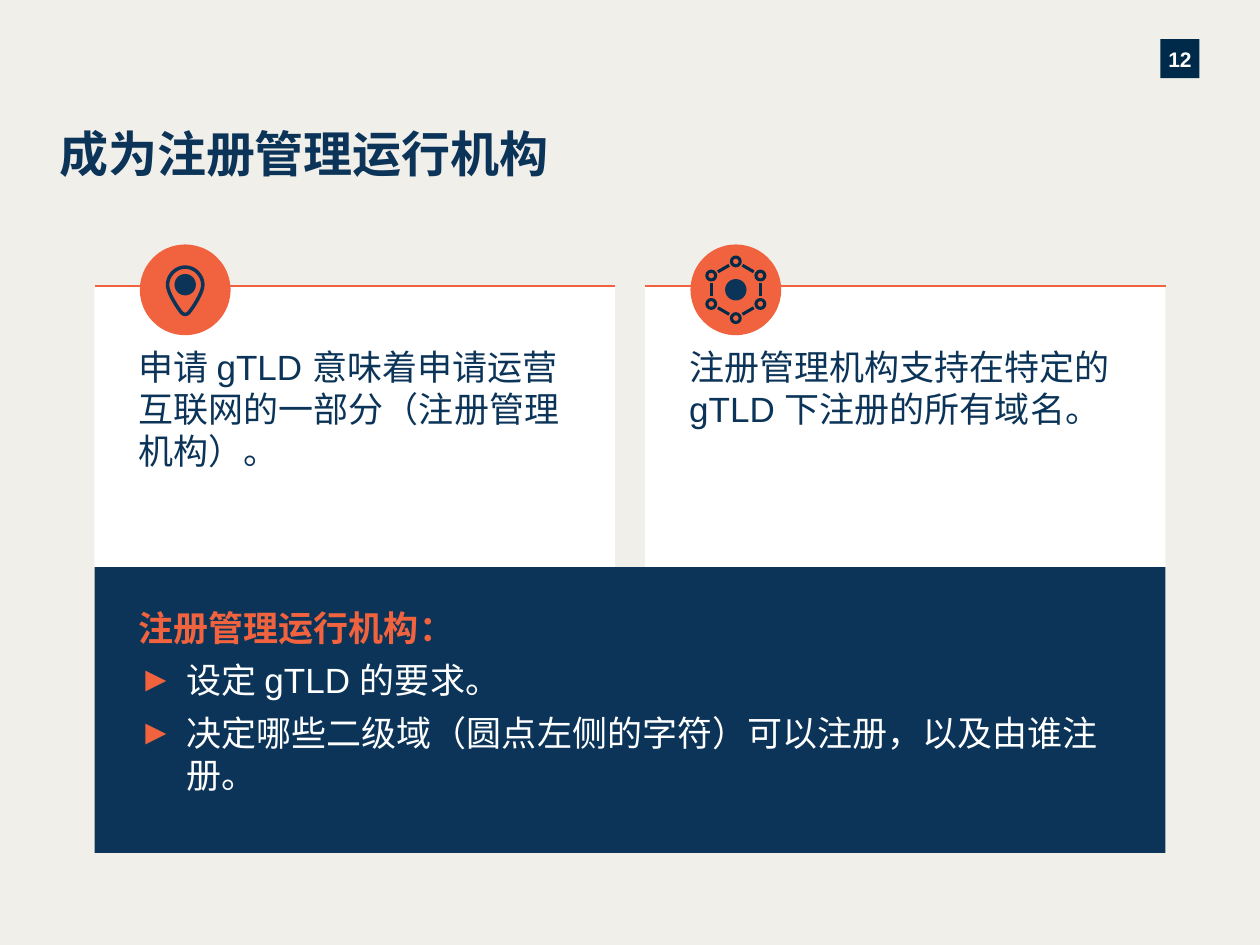
import math

from lxml import etree
from pptx import Presentation, util as u
from pptx.dml.color import RGBColor
from pptx.enum import lang, shapes, text
from pptx.oxml import ns

COLORS = {
    "paper": "F1EFEA", "white": "FFFFFF", "navy": "0B3458",
    "ink": "002B49", "badge": "002A49", "orange": "F1633E",
}
WIDTH, HEIGHT = 10, 7.5
MARGIN, GUTTER = 0.75, 0.24
COLUMN = (WIDTH - 2 * MARGIN - GUTTER) / 2
CARD_TOP, PANEL_TOP, PANEL_HEIGHT = 2.27, 4.5, 2.27
CARDS = [
    "申请 gTLD 意味着申请运营互联网的一部分（注册管理机构）。",
    "注册管理机构支持在特定的 gTLD 下注册的所有域名。",
]
DUTIES = ["设定 gTLD 的要求。", "决定哪些二级域（圆点左侧的字符）可以注册，以及由谁注册。"]


def rgb(name):
    """Return a palette colour."""
    return RGBColor.from_string(COLORS[name])


def paint(item, fill=None, line=None, weight=1.75):
    """Set the fill and outline of a shape; None leaves them empty."""
    if fill:
        item.fill.solid()
        item.fill.fore_color.rgb = rgb(fill)
    else:
        item.fill.background()
    if line:
        item.line.color.rgb = rgb(line)
        item.line.width = u.Pt(weight)
    else:
        item.line.fill.background()


def set_frame(frame, insets=(0, 0, 0, 0), anchor=text.MSO_ANCHOR.TOP):
    """Set wrapping, insets and anchoring of a text frame."""
    frame.word_wrap = True
    frame.auto_size = text.MSO_AUTO_SIZE.NONE
    frame.vertical_anchor = anchor
    (frame.margin_left, frame.margin_top,
     frame.margin_right, frame.margin_bottom) = map(u.Inches, insets)


def style(paragraph, color, size=20, bold=False, align=text.PP_ALIGN.LEFT, before=0):
    """Format a paragraph and its runs."""
    paragraph.alignment = align
    paragraph.space_before = u.Pt(before)
    for run in paragraph.runs:
        run.font.name, run.font.size, run.font.bold = "Arial", u.Pt(size), bold
        run.font.color.rgb = rgb(color)
        run.font.language_id = lang.MSO_LANGUAGE_ID.SIMPLIFIED_CHINESE


def set_bullet(paragraph, mark=None, indent=0):
    """Give a paragraph an orange bullet, or remove the inherited one."""
    props = paragraph._p.get_or_add_pPr()
    props.set("marL", str(u.Inches(indent)))
    props.set("indent", str(-u.Inches(indent)))
    if not mark:
        etree.SubElement(props, ns.qn("a:buNone"))
        return
    tint = etree.SubElement(props, ns.qn("a:buClr"))
    etree.SubElement(tint, ns.qn("a:srgbClr"), val=COLORS["orange"])
    etree.SubElement(props, ns.qn("a:buFont"), typeface="Arial")
    etree.SubElement(props, ns.qn("a:buChar"), char=mark)


def place(item, left, top, width, height):
    """Move and size a placeholder."""
    item.left, item.top, item.width, item.height = map(
        u.Inches, (left, top, width, height))


def add_box(parent, left, top, width, height, fill):
    """Add a plain filled rectangle."""
    box = parent.add_shape(shapes.MSO_SHAPE.RECTANGLE,
                           *map(u.Inches, (left, top, width, height)))
    box.shadow.inherit = False
    paint(box, fill)
    return box


def add_disc(parent, x, y, radius, fill=None, line=None):
    """Add a circle around a centre point."""
    disc = parent.add_shape(
        shapes.MSO_SHAPE.OVAL,
        *map(u.Inches, (x - radius, y - radius, 2 * radius, 2 * radius)))
    disc.shadow.inherit = False
    paint(disc, fill, line)


def add_line(parent, start, end, color, weight):
    """Add a straight line without a shadow."""
    rule = parent.add_connector(shapes.MSO_CONNECTOR.STRAIGHT,
                                *map(u.Inches, (*start, *end)))
    rule.line.color.rgb = rgb(color)
    rule.line.width = u.Pt(weight)
    etree.SubElement(rule._element.spPr, ns.qn("a:effectLst"))


def curve_points(start, curves, steps=12):
    """Sample points along a chain of cubic curves."""
    points = [start]
    for a, b, end in curves:
        p = points[-1]
        for t in (i / steps for i in range(1, steps + 1)):
            weights = ((1 - t) ** 3, 3 * t * (1 - t) ** 2, 3 * t * t * (1 - t), t ** 3)
            points.append(tuple(sum(w * c for w, c in zip(weights, axis))
                                for axis in zip(p, a, b, end)))
    return points


def add_pin_icon(parent, x, y):
    """Draw the map pin on its disc."""
    add_disc(parent, x, y, 0.36, fill="orange")
    add_disc(parent, x, y - 0.04, 0.085, fill="navy")
    points = curve_points((0.03, 0.18), [
        ((0.01, 0.2), (-0.01, 0.2), (-0.03, 0.18)),
        ((-0.07, 0.13), (-0.14, 0.02), (-0.14, -0.04)),
        ((-0.14, -0.11), (-0.08, -0.18), (0, -0.18)),
        ((0.08, -0.18), (0.14, -0.11), (0.14, -0.04)),
        ((0.14, 0.02), (0.07, 0.13), (0.03, 0.18)),
    ])
    outline = [(u.Inches(x + dx), u.Inches(y + dy)) for dx, dy in points]
    builder = parent.build_freeform(*outline[0])
    builder.add_line_segments(outline[1:], close=True)
    pin = builder.convert_to_shape()
    pin.shadow.inherit = False
    paint(pin, line="navy", weight=2)


def add_network_icon(parent, x, y):
    """Draw the ring of linked nodes on its disc."""
    add_disc(parent, x, y, 0.36, fill="orange")
    ring = 0.225
    nodes = [(x + ring * math.sin(k * math.pi / 3), y - ring * math.cos(k * math.pi / 3))
             for k in range(6)]
    for (ax, ay), (bx, by) in zip(nodes, nodes[1:] + nodes[:1]):
        start, end = ((ax + (bx - ax) * s, ay + (by - ay) * s) for s in (0.27, 0.73))
        add_line(parent, start, end, "ink", 1.75)
    for node in nodes:
        add_disc(parent, *node, 0.035, line="ink")
    add_disc(parent, x, y, 0.085, fill="navy")


def add_card(slide, column, wording, draw_icon):
    """Add a white card with its top rule and icon."""
    left = MARGIN + column * (COLUMN + GUTTER)
    card = add_box(slide.shapes, left, CARD_TOP, COLUMN, PANEL_TOP - CARD_TOP, "white")
    set_frame(card.text_frame, (0.35, 0.47, 0.39, 0.3))
    card.text_frame.text = wording
    style(card.text_frame.paragraphs[0], "navy")
    add_line(slide.shapes, (left, CARD_TOP), (left + COLUMN, CARD_TOP), "orange", 1.25)
    draw_icon(slide.shapes.add_group_shape().shapes, left + 0.72, CARD_TOP + 0.03)


def fill_title(title):
    """Place and write the slide title."""
    place(title, 0.47, 0.98, 5.64, 0.52)
    set_frame(title.text_frame)
    title.text_frame.text = "成为注册管理运行机构"
    style(title.text_frame.paragraphs[0], "navy", 28, bold=True)


def fill_panel(panel):
    """Turn the body placeholder into the navy panel of duties."""
    place(panel, MARGIN, PANEL_TOP, WIDTH - 2 * MARGIN, PANEL_HEIGHT)
    paint(panel, "navy")
    frame = panel.text_frame
    set_frame(frame, (0.35, 0.31, 0.47, 0.3))
    frame.text = "注册管理运行机构："
    set_bullet(frame.paragraphs[0])
    style(frame.paragraphs[0], "orange", bold=True)
    for duty in DUTIES:
        paragraph = frame.add_paragraph()
        paragraph.text = duty
        set_bullet(paragraph, "►", 0.38)
        style(paragraph, "white", before=6)


def add_page_number(slide, number):
    """Add the square page badge."""
    badge = add_box(slide.shapes, 9.21, 0.31, 0.31, 0.31, "badge")
    set_frame(badge.text_frame, anchor=text.MSO_ANCHOR.MIDDLE)
    badge.text_frame.text = number
    paragraph = badge.text_frame.paragraphs[0]
    style(paragraph, "white", 12, bold=True, align=text.PP_ALIGN.CENTER)
    paragraph.line_spacing = 1.08


def main():
    """Build and save the slide."""
    deck = Presentation()
    deck.slide_width, deck.slide_height = u.Inches(WIDTH), u.Inches(HEIGHT)
    slide = deck.slides.add_slide(deck.slide_layouts[1])
    slide.background.fill.solid()
    slide.background.fill.fore_color.rgb = rgb("paper")
    add_page_number(slide, "12")
    fill_title(slide.shapes.title)
    fill_panel(slide.placeholders[1])
    for column, (wording, icon) in enumerate(zip(CARDS, (add_pin_icon, add_network_icon))):
        add_card(slide, column, wording, icon)
    deck.save("out.pptx")


if __name__ == "__main__":
    main()
